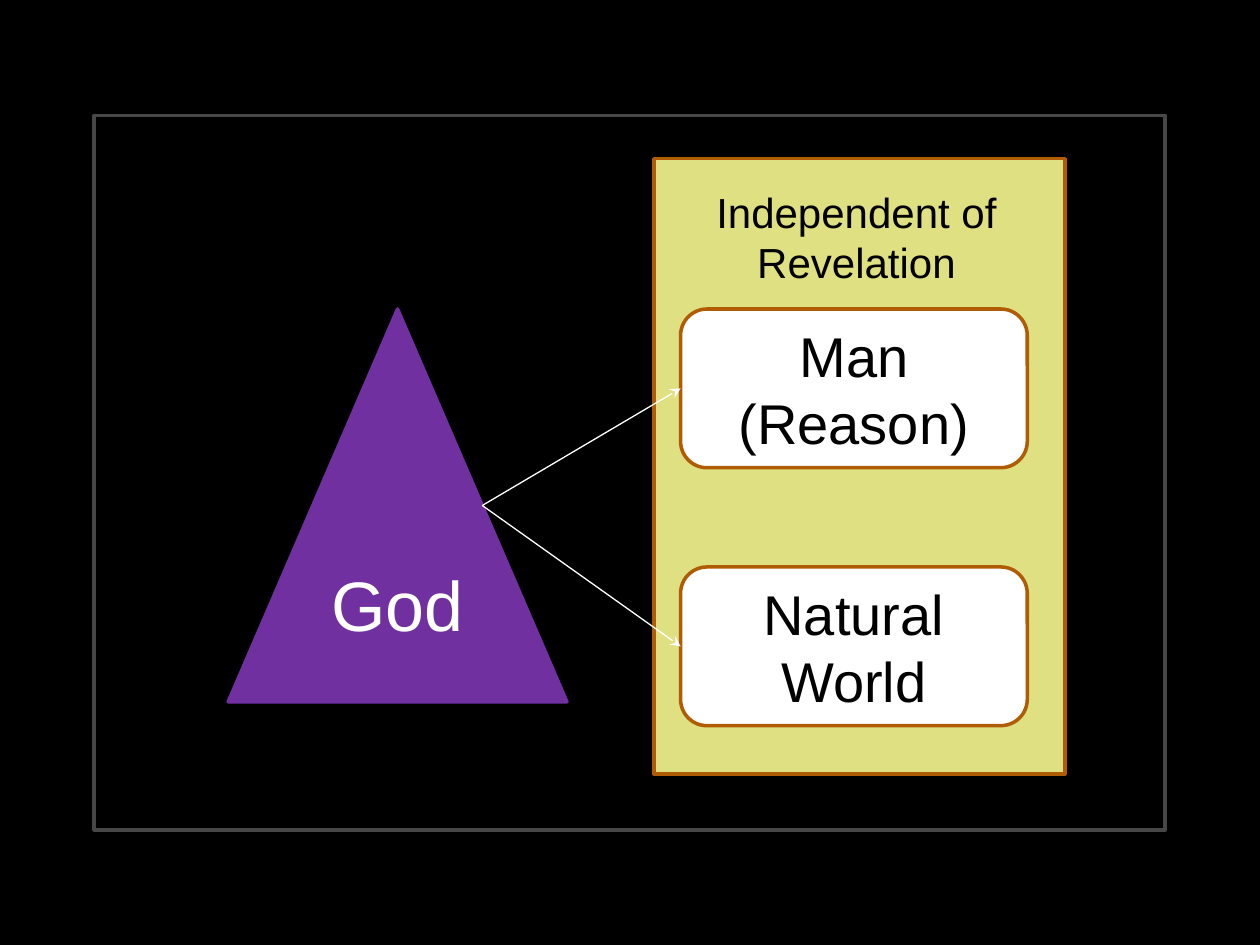
from dataclasses import dataclass

from lxml import etree
from pptx import Presentation
from pptx.dml.color import RGBColor
from pptx.enum.shapes import MSO_CONNECTOR, MSO_SHAPE
from pptx.enum.text import MSO_ANCHOR, PP_ALIGN
from pptx.oxml.ns import qn
from pptx.util import Cm, Pt

RECTANGLE = MSO_SHAPE.RECTANGLE
ROUNDED = MSO_SHAPE.ROUNDED_RECTANGLE
TRIANGLE = MSO_SHAPE.ISOSCELES_TRIANGLE
STRAIGHT = MSO_CONNECTOR.STRAIGHT
MIDDLE, TOP = MSO_ANCHOR.MIDDLE, MSO_ANCHOR.TOP
CENTER = PP_ALIGN.CENTER
LEFT_SIDE = 1


@dataclass(frozen=True)
class Theme:
    font: str = "Arial"
    black: str = "000000"
    white: str = "FFFFFF"
    frame: str = "474747"
    panel: str = "DEE082"
    border: str = "B05C05"
    purple: str = "7030A0"
    heading_size: float = 24
    box_size: float = 32
    god_size: float = 40
    arrow_width: float = 0.75
    border_width: float = 2
    frame_width: float = 2.25


class SlideBuilder:
    def __init__(self, slide, theme):
        self.slide = slide
        self.theme = theme

    def background(self, color):
        fill = self.slide.background.fill
        fill.solid()
        fill.fore_color.rgb = RGBColor.from_string(color)

    def label(self, shape, lines, size, color, anchor):
        frame = shape.text_frame
        frame.word_wrap = True
        frame.vertical_anchor = anchor
        frame.text = "\n".join(lines)
        for paragraph in frame.paragraphs:
            paragraph.alignment = CENTER
            paragraph.font.name = self.theme.font
            paragraph.font.size = Pt(size)
            paragraph.font.color.rgb = RGBColor.from_string(color)

    def shape(self, kind, bounds, fill, line, width):
        shape = self.slide.shapes.add_shape(kind, *map(Cm, bounds))
        shape.shadow.inherit = False
        if fill:
            shape.fill.solid()
            shape.fill.fore_color.rgb = RGBColor.from_string(fill)
        else:
            shape.fill.background()
        shape.line.color.rgb = RGBColor.from_string(line)
        shape.line.width = Pt(width)
        return shape

    def text(self, bounds, lines, size, color):
        box = self.slide.shapes.add_textbox(*map(Cm, bounds))
        self.label(box, lines, size, color, TOP)

    def arrow(self, start_x, start_y, target):
        connector = self.slide.shapes.add_connector(
            STRAIGHT, start_x, start_y, target.left, target.top)
        connector.end_connect(target, LEFT_SIDE)
        connector.line.color.rgb = RGBColor.from_string(self.theme.white)
        connector.line.width = Pt(self.theme.arrow_width)
        properties = connector.element.spPr
        etree.SubElement(properties.find(qn("a:ln")), qn("a:tailEnd"), type="stealth")
        etree.SubElement(properties, qn("a:effectLst"))


def main():
    presentation = Presentation()
    presentation.slide_width, presentation.slide_height = Cm(25.4), Cm(19.05)
    theme = Theme()
    builder = SlideBuilder(
        presentation.slides.add_slide(presentation.slide_layouts[6]), theme)
    builder.background(theme.black)

    builder.shape(RECTANGLE, (1.9, 2.33, 21.59, 14.4), None,
                  theme.frame, theme.frame_width)
    builder.shape(RECTANGLE, (13.18, 3.2, 8.29, 12.4), theme.panel,
                  theme.border, theme.border_width)

    god = builder.shape(TRIANGLE, (4.6, 6.23, 6.83, 7.92), theme.purple,
                        theme.purple, theme.border_width)
    builder.label(god, ["God"], theme.god_size, theme.white, MIDDLE)

    boxes = []
    for top, lines in ((6.23, ["Man", "(Reason)"]), (11.43, ["Natural World"])):
        box = builder.shape(ROUNDED, (13.72, top, 6.99, 3.2), theme.white,
                            theme.border, theme.border_width)
        builder.label(box, lines, theme.box_size, theme.black, MIDDLE)
        boxes.append(box)

    slope_x = god.left + god.width * 3 // 4
    slope_y = god.top + god.height // 2
    for box in boxes:
        builder.arrow(slope_x, slope_y, box)

    builder.text((13.72, 3.63, 7.09, 2.31), ["Independent of Revelation"],
                 theme.heading_size, theme.black)

    presentation.save("out.pptx")


if __name__ == "__main__":
    main()
